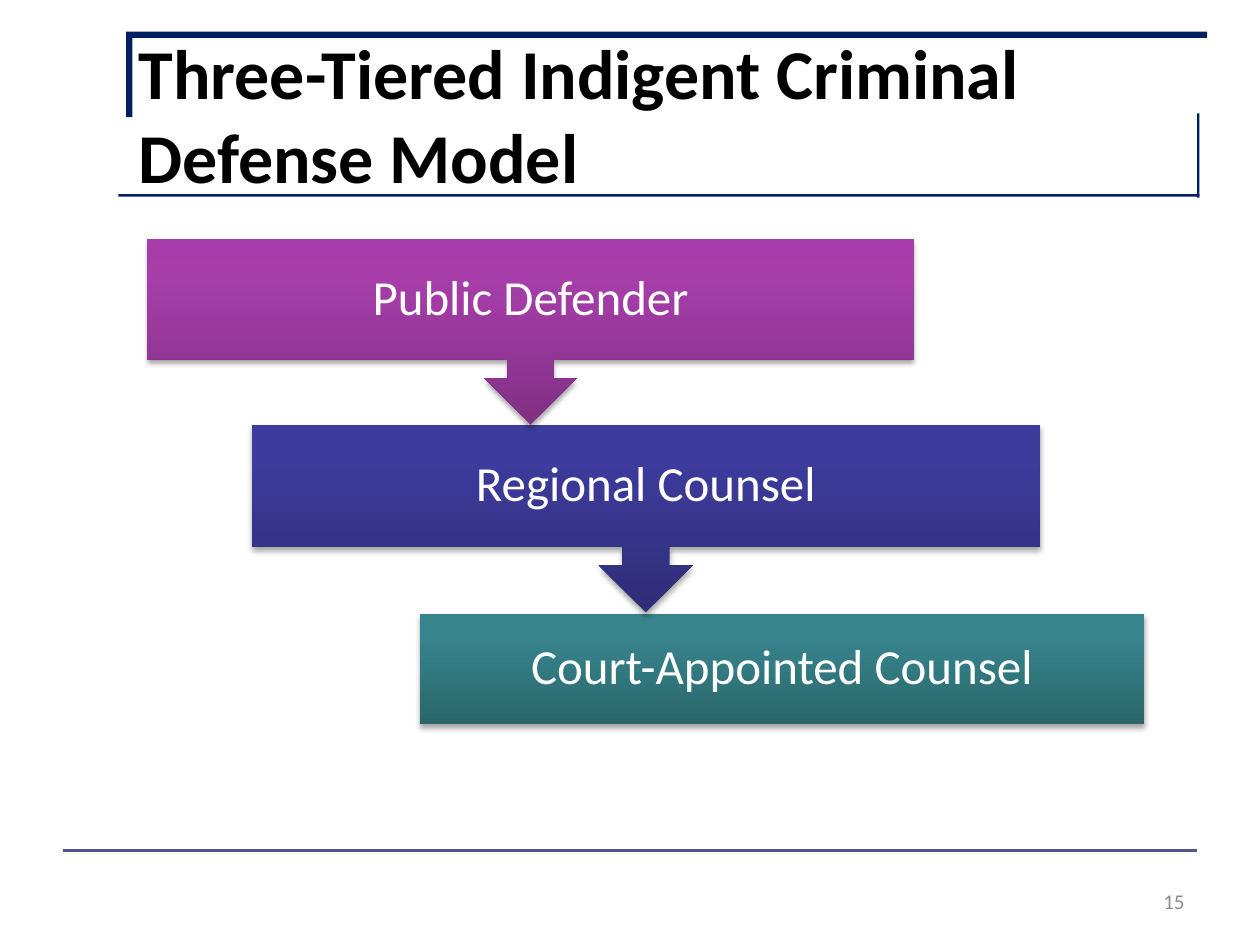
from copy import deepcopy

from lxml.etree import SubElement
from pptx import Presentation
from pptx.dml.color import RGBColor
from pptx.enum.shapes import MSO_CONNECTOR, MSO_SHAPE
from pptx.enum.text import MSO_ANCHOR, MSO_AUTO_SIZE, PP_ALIGN
from pptx.oxml.ns import qn
from pptx.util import Inches, Pt

COLORS = {
    "navy": "002060",
    "rule": "53548A",
    "black": "000000",
    "white": "FFFFFF",
    "gray": "8C8C8C",
}
GRADIENTS = {
    "purple": ["803083", "A73EAA", "A93CAD"],
    "indigo": ["2F2D77", "3D3B9B", "3C399D"],
    "teal": ["2A666B", "37848C", "36868E"],
}
STOP_POSITIONS = [0, 0.8, 1]
FRAME_BARS = [
    (0.94, 1.54, 8.58, 0.02),
    (1, 0.25, 8.58, 0.05),
    (1, 0.26, 0.05, 0.67),
    (9.5, 0.9, 0.02, 0.67),
]
TIERS = [
    ("Court-Appointed Counsel", MSO_SHAPE.RECTANGLE, (3.33, 4.87, 5.75, 0.88), "teal"),
    ("Regional Counsel", MSO_SHAPE.DOWN_ARROW_CALLOUT, (2, 3.37, 6.25, 1.49), "indigo"),
    ("Public Defender", MSO_SHAPE.DOWN_ARROW_CALLOUT, (1.17, 1.9, 6.08, 1.47), "purple"),
]


def rgb(name):
    """Return the named colour."""
    return RGBColor.from_string(COLORS[name])


def set_text(tf, text, size, color, align, bold=False):
    """Fill a text frame with one formatted, vertically centred paragraph."""
    tf.word_wrap = True
    tf.auto_size = MSO_AUTO_SIZE.NONE
    tf.vertical_anchor = MSO_ANCHOR.MIDDLE
    p = tf.paragraphs[0]
    p.text = text
    p.alignment = align
    for r in p.runs:
        r.font.name = "Calibri"
        r.font.size = Pt(size)
        r.font.bold = bold
        r.font.color.rgb = rgb(color)


def add_title(s, text):
    """Place and format the title placeholder."""
    sp = s.shapes.title
    sp.left, sp.top, sp.width, sp.height = map(Inches, (1, 0.3, 8.5, 1.2))
    set_text(sp.text_frame, text, 40, "black", PP_ALIGN.LEFT, bold=True)


def add_bar(s, box):
    """Add one thin bar of the title frame."""
    sp = s.shapes.add_shape(MSO_SHAPE.RECTANGLE, *map(Inches, box))
    sp.shadow.inherit = False
    sp.fill.solid()
    sp.fill.fore_color.rgb = rgb("navy")
    sp.line.fill.background()


def add_footer_rule(s):
    """Add the rule above the slide number."""
    line = s.shapes.add_connector(
        MSO_CONNECTOR.STRAIGHT, Inches(0.5), Inches(6.75), Inches(9.5), Inches(6.75)
    )
    line.line.color.rgb = rgb("rule")
    line.line.width = Pt(1.5)
    SubElement(line._element.spPr, qn("a:effectLst"))


def add_slide_number(s, number):
    """Add the slide number at the lower right."""
    sp = s.shapes.add_textbox(*map(Inches, (7.17, 6.95, 2.33, 0.4)))
    set_text(sp.text_frame, number, 12, "gray", PP_ALIGN.RIGHT)


def fill_gradient(sp, colors):
    """Fill a shape with a three-stop gradient running upwards."""
    sp.fill.gradient()
    sp.fill.gradient_angle = 90
    stops = sp._element.spPr.find(".//" + qn("a:gsLst"))
    stops.append(deepcopy(stops[-1]))
    for stop, position, color in zip(sp.fill.gradient_stops, STOP_POSITIONS, colors):
        stop.position = position
        stop.color.rgb = RGBColor.from_string(color)


def add_shadow(sp):
    """Give a shape a soft shadow below it."""
    sp.shadow.inherit = False
    effects = sp._element.spPr.find(qn("a:effectLst"))
    shadow = SubElement(
        effects, qn("a:outerShdw"), blurRad=str(Pt(3.1)), dist=str(Pt(1.8)),
        dir="5400000", rotWithShape="0",
    )
    color = SubElement(shadow, qn("a:srgbClr"), val=COLORS["black"])
    SubElement(color, qn("a:alpha"), val="35000")


def add_tier(s, text, kind, box, gradient):
    """Add one labelled tier of the model."""
    sp = s.shapes.add_shape(kind, *map(Inches, box))
    fill_gradient(sp, GRADIENTS[gradient])
    sp.line.fill.background()
    add_shadow(sp)
    tf = sp.text_frame
    tf.margin_left = tf.margin_top = tf.margin_right = tf.margin_bottom = Inches(0.22)
    set_text(tf, text, 28, "white", PP_ALIGN.CENTER)
    tf.paragraphs[0].line_spacing = 0.9


def main():
    """Build and save the slide."""
    prs = Presentation()
    prs.slide_width, prs.slide_height = Inches(10), Inches(7.5)
    s = prs.slides.add_slide(prs.slide_layouts[5])
    add_footer_rule(s)
    for box in FRAME_BARS:
        add_bar(s, box)
    add_title(s, "Three-Tiered Indigent Criminal\vDefense Model")
    add_slide_number(s, "15")
    for tier in TIERS:
        add_tier(s, *tier)
    prs.save("out.pptx")


if __name__ == "__main__":
    main()
